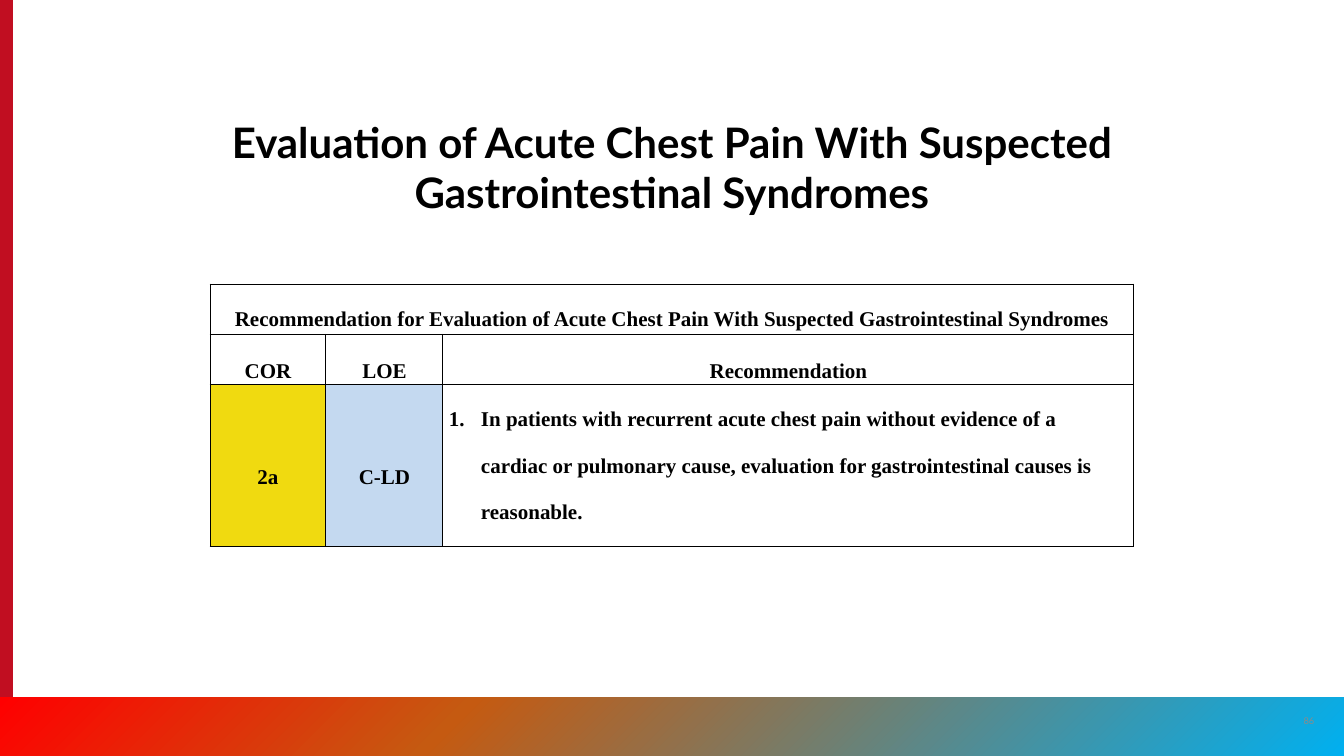
from dataclasses import dataclass
from typing import Optional

import lxml.etree
import pptx
import pptx.dml.color
import pptx.enum.shapes
import pptx.enum.text
import pptx.oxml
import pptx.oxml.ns
import pptx.util

RGBColor = pptx.dml.color.RGBColor
Anchor = pptx.enum.text.MSO_ANCHOR
Align = pptx.enum.text.PP_ALIGN
Rectangle = pptx.enum.shapes.MSO_SHAPE.RECTANGLE

BLACK = RGBColor(0x00, 0x00, 0x00)
GRAY = RGBColor(0x8A, 0x8B, 0x8A)
CRIMSON = RGBColor(0xC1, 0x0E, 0x21)
RED = RGBColor(0xFF, 0x00, 0x00)
ORANGE = RGBColor(0xC5, 0x5A, 0x11)
BLUE = RGBColor(0x00, 0xB0, 0xF0)
YELLOW = RGBColor(0xF0, 0xDA, 0x10)
PALE_BLUE = RGBColor(0xC4, 0xD9, 0xF0)

EMU_PER_PX = 914400 / 84
SLIDE_WIDTH, SLIDE_HEIGHT = 1344, 756
BAR_TOP = 697
COLUMN_WIDTHS = (116, 117, 691)
ROW_HEIGHTS = (48, 49, 162)
CELL_MARGIN = 6
NUMBER_INDENT = 32
BORDER_POINTS = 1
FOOTER_STOPS = ((0, BLUE), (66, ORANGE), (100, RED))


@dataclass(frozen=True)
class Entry:
    row: int
    column: int
    text: str
    fill: Optional[RGBColor] = None
    anchor: Anchor = Anchor.MIDDLE
    numbered: bool = False


ENTRIES = (
    Entry(0, 0, "Recommendation for Evaluation of Acute Chest Pain With Suspected "
          "Gastrointestinal Syndromes", anchor=Anchor.TOP),
    Entry(1, 0, "COR"),
    Entry(1, 1, "LOE"),
    Entry(1, 2, "Recommendation"),
    Entry(2, 0, "2a", YELLOW),
    Entry(2, 1, "C-LD", PALE_BLUE),
    Entry(2, 2, "In patients with recurrent acute chest pain without evidence of a cardiac "
          "or pulmonary cause, evaluation for gastrointestinal causes is reasonable.",
          anchor=Anchor.TOP, numbered=True),
)


def px(length: int) -> pptx.util.Emu:
    return pptx.util.Emu(round(length * EMU_PER_PX))


def place(shape, left: int, top: int, width: int, height: int) -> None:
    shape.left, shape.top = px(left), px(top)
    shape.width, shape.height = px(width), px(height)


def style(para, name: str, size: int, color: RGBColor, bold: bool) -> None:
    para.font.name = name
    para.font.size = pptx.util.Pt(size)
    para.font.bold = bold
    para.font.color.rgb = color


def add_bar(page, left: int, top: int, width: int, height: int, color: RGBColor):
    bar = page.shapes.add_shape(Rectangle, px(left), px(top), px(width), px(height))
    bar.shadow.inherit = False
    bar.fill.solid()
    bar.fill.fore_color.rgb = color
    bar.line.fill.background()
    return bar


def add_footer(page) -> None:
    bar = add_bar(page, 0, BAR_TOP, SLIDE_WIDTH, SLIDE_HEIGHT - BAR_TOP, BLUE)
    bar.rotation = 180
    stops = "".join(
        f'<a:gs pos="{percent * 1000}"><a:srgbClr val="{color}"/></a:gs>'
        for percent, color in FOOTER_STOPS)
    gradient = pptx.oxml.parse_xml(
        f'<a:gradFill {pptx.oxml.ns.nsdecls("a")} rotWithShape="1"><a:gsLst>{stops}</a:gsLst>'
        '<a:lin ang="2700000" scaled="0"/></a:gradFill>')
    properties = bar.fill._xPr
    properties.replace(properties.find(pptx.oxml.ns.qn("a:solidFill")), gradient)


def add_title(page) -> None:
    title = page.shapes.title
    place(title, 202, 112, 940, 108)
    frame = title.text_frame
    frame.text = "Evaluation of Acute Chest Pain With Suspected Gastrointestinal Syndromes"
    frame.word_wrap = True
    frame.auto_size = pptx.enum.text.MSO_AUTO_SIZE.NONE
    frame.vertical_anchor = Anchor.TOP
    para = frame.paragraphs[0]
    para.alignment = Align.CENTER
    style(para, "Lato", 36, BLACK, True)


def add_page_number(page) -> None:
    box = page.shapes.add_textbox(px(1289), px(701), px(40), px(40))
    frame = box.text_frame
    frame.text = "86"
    frame.word_wrap = True
    frame.vertical_anchor = Anchor.MIDDLE
    para = frame.paragraphs[0]
    para.alignment = Align.CENTER
    style(para, "Lato", 8, GRAY, False)


def add_borders(cell) -> None:
    properties = cell._tc.get_or_add_tcPr()
    for side in ("lnL", "lnR", "lnT", "lnB"):
        properties.append(pptx.oxml.parse_xml(
            f'<a:{side} {pptx.oxml.ns.nsdecls("a")} w="{pptx.util.Pt(BORDER_POINTS)}">'
            f'<a:solidFill><a:srgbClr val="{BLACK}"/></a:solidFill></a:{side}>'))


def fill_cell(cell, entry: Entry) -> None:
    if entry.fill is not None:
        cell.fill.solid()
        cell.fill.fore_color.rgb = entry.fill
    cell.vertical_anchor = entry.anchor
    cell.margin_left = cell.margin_right = px(CELL_MARGIN)
    cell.margin_top = cell.margin_bottom = 0
    cell.text_frame.text = entry.text
    para = cell.text_frame.paragraphs[0]
    para.line_spacing = 2.0
    para.alignment = Align.LEFT if entry.numbered else Align.CENTER
    if entry.numbered:
        properties = para._p.get_or_add_pPr()
        properties.set("marL", str(px(NUMBER_INDENT)))
        properties.set("indent", str(-px(NUMBER_INDENT)))
        number = lxml.etree.SubElement(properties, pptx.oxml.ns.qn("a:buAutoNum"))
        number.set("type", "arabicPeriod")
    style(para, "Times New Roman", 18, BLACK, True)


def add_recommendations(page) -> None:
    table = page.shapes.add_table(
        len(ROW_HEIGHTS), len(COLUMN_WIDTHS), px(210), px(284),
        px(sum(COLUMN_WIDTHS)), px(sum(ROW_HEIGHTS))).table
    table.first_row = False
    table.horz_banding = False
    for column, width in zip(table.columns, COLUMN_WIDTHS):
        column.width = px(width)
    for row, height in zip(table.rows, ROW_HEIGHTS):
        row.height = px(height)
    table.cell(0, 0).merge(table.cell(0, len(COLUMN_WIDTHS) - 1))
    for cell in table.iter_cells():
        add_borders(cell)
        cell.fill.background()
    for entry in ENTRIES:
        fill_cell(table.cell(entry.row, entry.column), entry)


def main() -> None:
    deck = pptx.Presentation()
    deck.slide_width, deck.slide_height = px(SLIDE_WIDTH), px(SLIDE_HEIGHT)
    page = deck.slides.add_slide(deck.slide_layouts[5])
    add_bar(page, 0, 0, 13, SLIDE_HEIGHT, CRIMSON)
    add_footer(page)
    add_page_number(page)
    add_title(page)
    add_recommendations(page)
    deck.save("out.pptx")


if __name__ == "__main__":
    main()
